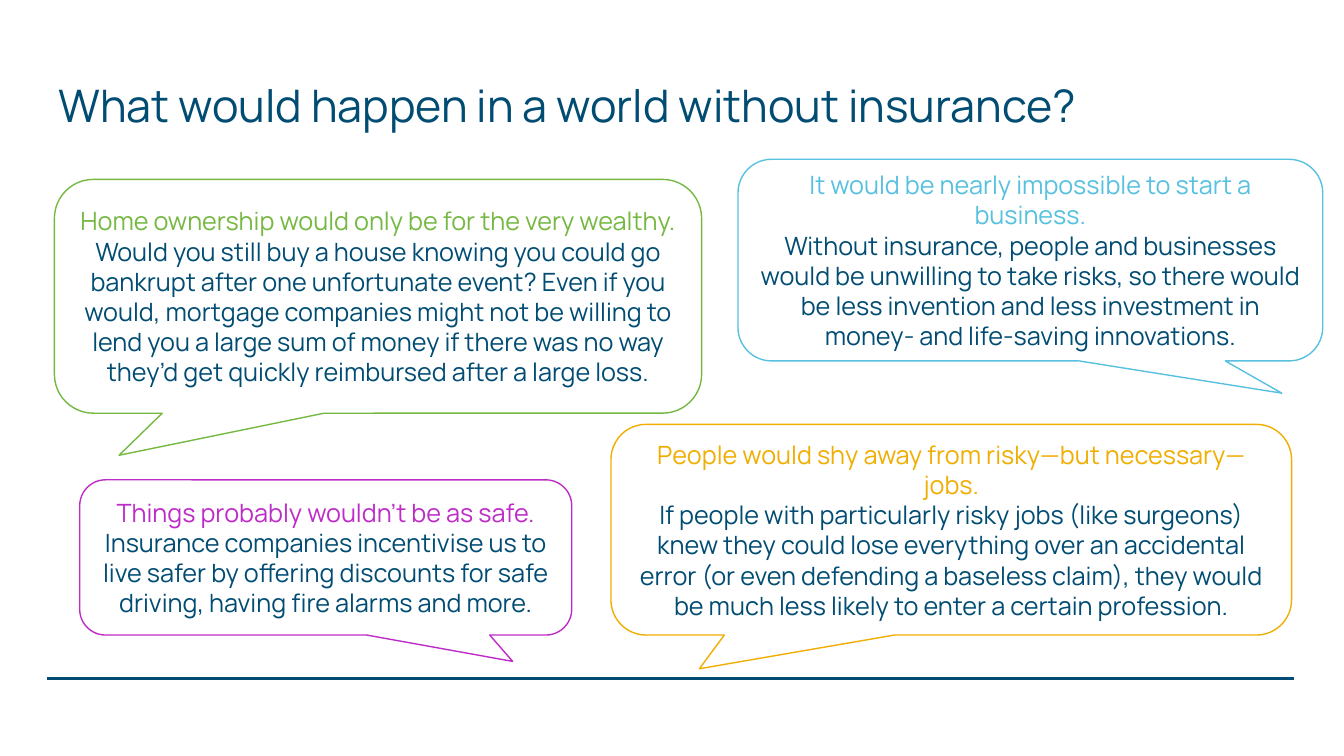
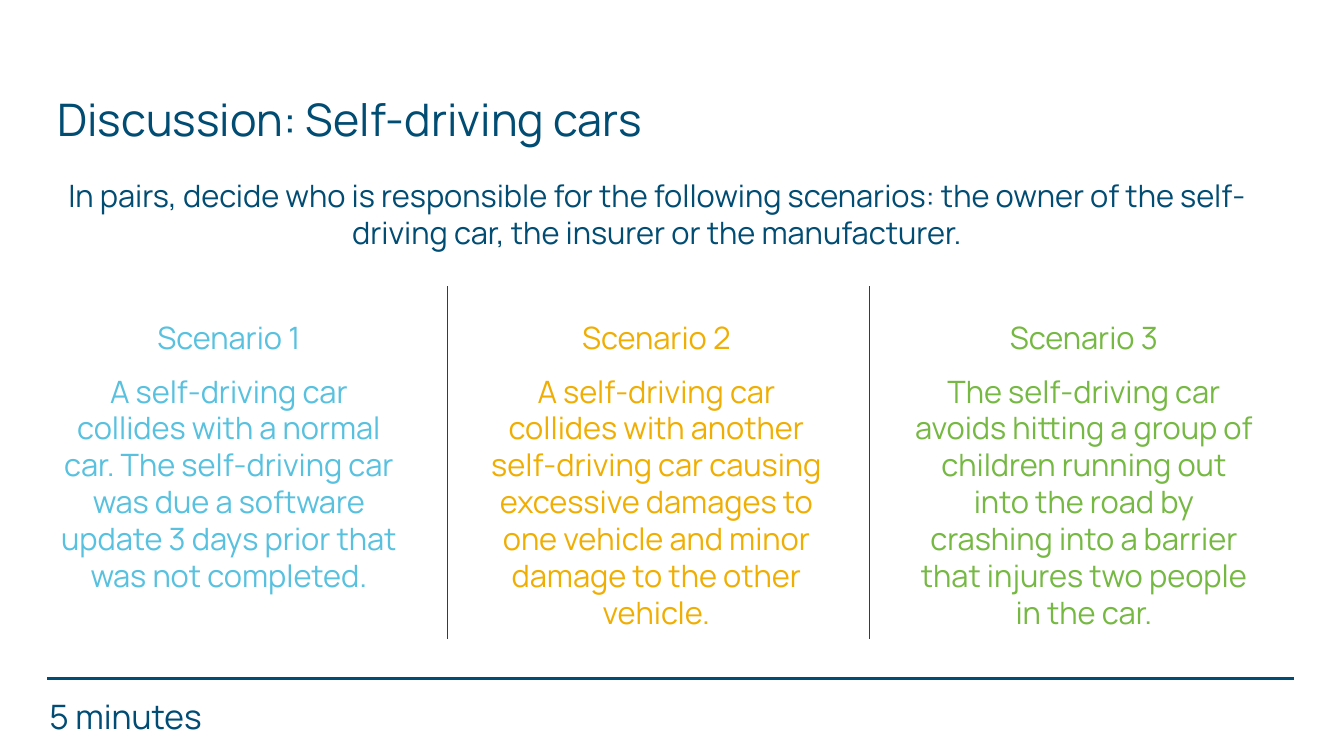
from dataclasses import dataclass

from lxml import etree
from pptx import Presentation
from pptx import util as u
from pptx.dml.color import RGBColor
from pptx.enum import shapes, text
from pptx.oxml import ns


@dataclass(frozen=True)
class Theme:
    width: int = u.Inches(13.33)
    height: int = u.Inches(7.5)
    font: str = "Manrope"
    navy: str = "004C73"
    rule: str = "014C74"
    white: str = "FFFFFF"
    green: str = "75B842"
    blue: str = "57C1DF"
    amber: str = "F1AE02"
    purple: str = "BE2CC8"
    title_size: int = 32
    timer_size: int = 24
    body_size: int = 22
    callout_size: int = 18
    rule_weight: float = 2.25
    callout_weight: float = 1
    divider_weight: float = 0.5


THEME = Theme()


@dataclass(frozen=True)
class Box:
    """Left, top, width and height as percentages of the slide."""
    left: float
    top: float
    width: float
    height: float

    @property
    def right(self):
        return self.left + self.width

    @property
    def bottom(self):
        return self.top + self.height

    def place(self):
        return (across(self.left), down(self.top),
                across(self.width), down(self.height))


def across(share):
    return round(THEME.width * share / 100)


def down(share):
    return round(THEME.height * share / 100)


def rgb(code):
    return RGBColor.from_string(code)


def write(frame, lines, size, align=text.PP_ALIGN.CENTER,
          anchor=text.MSO_ANCHOR.TOP, space_after=()):
    frame.word_wrap = True
    frame.vertical_anchor = anchor
    frame.text = "\n".join(words for words, _ in lines)
    for para, (_, color) in zip(frame.paragraphs, lines):
        para.alignment = align
        for span in para.runs:
            span.font.name = THEME.font
            span.font.size = u.Pt(size)
            span.font.color.rgb = rgb(color)
    for para, gap in zip(frame.paragraphs, space_after):
        para.space_after = u.Pt(gap)


def add_text(page, box, lines, size, **style):
    frame = page.shapes.add_textbox(*box.place()).text_frame
    write(frame, lines, size, **style)
    return frame


def add_line(page, start, end, color, weight):
    line = page.shapes.add_connector(
        shapes.MSO_CONNECTOR.STRAIGHT,
        across(start[0]), down(start[1]), across(end[0]), down(end[1]))
    line.line.color.rgb = rgb(color)
    line.line.width = u.Pt(weight)
    etree.SubElement(line._element.spPr, ns.qn("a:effectLst"))


def add_page(deck, title, title_box):
    page = deck.slides.add_slide(deck.slide_layouts[6])
    page.background.fill.solid()
    page.background.fill.fore_color.rgb = rgb(THEME.white)
    add_line(page, (3.53, 89.73), (96.25, 89.73), THEME.rule, THEME.rule_weight)
    frame = add_text(page, title_box, [(title, THEME.navy)], THEME.title_size,
                     align=text.PP_ALIGN.LEFT, anchor=text.MSO_ANCHOR.MIDDLE)
    frame.paragraphs[0].line_spacing = 0.9
    return page


def add_callout(page, box, tail, color, heading, body):
    bubble = page.shapes.add_shape(
        shapes.MSO_SHAPE.ROUNDED_RECTANGULAR_CALLOUT, *box.place())
    bubble.shadow.inherit = False
    bubble.adjustments[0], bubble.adjustments[1] = tail
    bubble.fill.solid()
    bubble.fill.fore_color.rgb = rgb(THEME.white)
    bubble.line.color.rgb = rgb(color)
    bubble.line.width = u.Pt(THEME.callout_weight)
    write(bubble.text_frame, [(heading, color), (body, THEME.navy)],
          THEME.callout_size, anchor=text.MSO_ANCHOR.MIDDLE)


def add_scenarios(page, box, scenarios, gap=4.8):
    count = len(scenarios)
    width = (box.width - gap * (count - 1)) / count
    for index, (color, body) in enumerate(scenarios):
        column = Box(box.left + index * (width + gap), box.top, width, box.height)
        add_text(page, column,
                 [(f"Scenario {index + 1}", color), (body, color)],
                 THEME.body_size, space_after=(12, 6))


def add_side_dividers(page, box):
    for side in (box.left, box.right):
        add_line(page, (side, box.top), (side, box.bottom),
                 THEME.navy, THEME.divider_weight)


def build_world_without_insurance(deck):
    page = add_page(deck, "What would happen in a world without insurance?",
                    Box(3.6, 8.13, 83.72, 12.27))
    callouts = [
        (Box(4.05, 23.73, 48.16, 30.93), (-0.4, 0.68), THEME.green,
         "Home ownership would only be for the very wealthy.",
         "Would you still buy a house knowing you could go bankrupt after one "
         "unfortunate event? Even if you would, mortgage companies might not be "
         "willing to lend you a large sum of money if there was no way they’d "
         "get quickly reimbursed after a large loss."),
        (Box(54.91, 21.07, 43.51, 26.67), (0.43, 0.66), THEME.blue,
         "It would be nearly impossible to start a business.",
         "Without insurance, people and businesses would be unwilling to take "
         "risks, so there would be less invention and less investment in "
         "money- and life-saving innovations."),
        (Box(45.46, 56.13, 50.64, 27.87), (-0.37, 0.66), THEME.amber,
         "People would shy away from risky—but necessary—jobs.",
         "If people with particularly risky jobs (like surgeons) knew they could "
         "lose everything over an accidental error (or even defending a baseless "
         "claim), they would be much less likely to enter a certain profession."),
        (Box(5.93, 63.47, 36.61, 20.53), (0.38, 0.67), THEME.purple,
         "Things probably wouldn’t be as safe.",
         "Insurance companies incentivise us to live safer by offering discounts "
         "for safe driving, having fire alarms and more."),
    ]
    for callout in callouts:
        add_callout(page, *callout)


def build_discussion(deck):
    page = add_page(deck, "Discussion: Self-driving cars",
                    Box(3.53, 10, 50.49, 12.27))
    add_text(page, Box(3.53, 22.67, 90.7, 11.2),
             [("In pairs, decide who is responsible for the following scenarios: "
               "the owner of the self-driving car, the insurer or the "
               "manufacturer.", THEME.navy)], THEME.body_size)
    add_scenarios(page, Box(3.53, 41.47, 90.62, 43.07), [
        (THEME.blue,
         "A self-driving car collides with a normal car. The self-driving car "
         "was due a software update 3 days prior that was not completed."),
        (THEME.amber,
         "A self-driving car collides with another self-driving car causing "
         "excessive damages to one vehicle and minor damage to the other "
         "vehicle."),
        (THEME.green,
         "The self-driving car avoids hitting a group of children running out "
         "into the road by crashing into a barrier that injures two people in "
         "the car."),
    ])
    add_side_dividers(page, Box(33.31, 37.87, 31.36, 46.67))
    add_text(page, Box(2.93, 91.33, 19.28, 6.67), [("5 minutes", THEME.rule)],
             THEME.timer_size, align=text.PP_ALIGN.LEFT)


def main():
    deck = Presentation()
    deck.slide_width, deck.slide_height = THEME.width, THEME.height
    build_world_without_insurance(deck)
    build_discussion(deck)
    deck.save("out.pptx")


if __name__ == "__main__":
    main()
